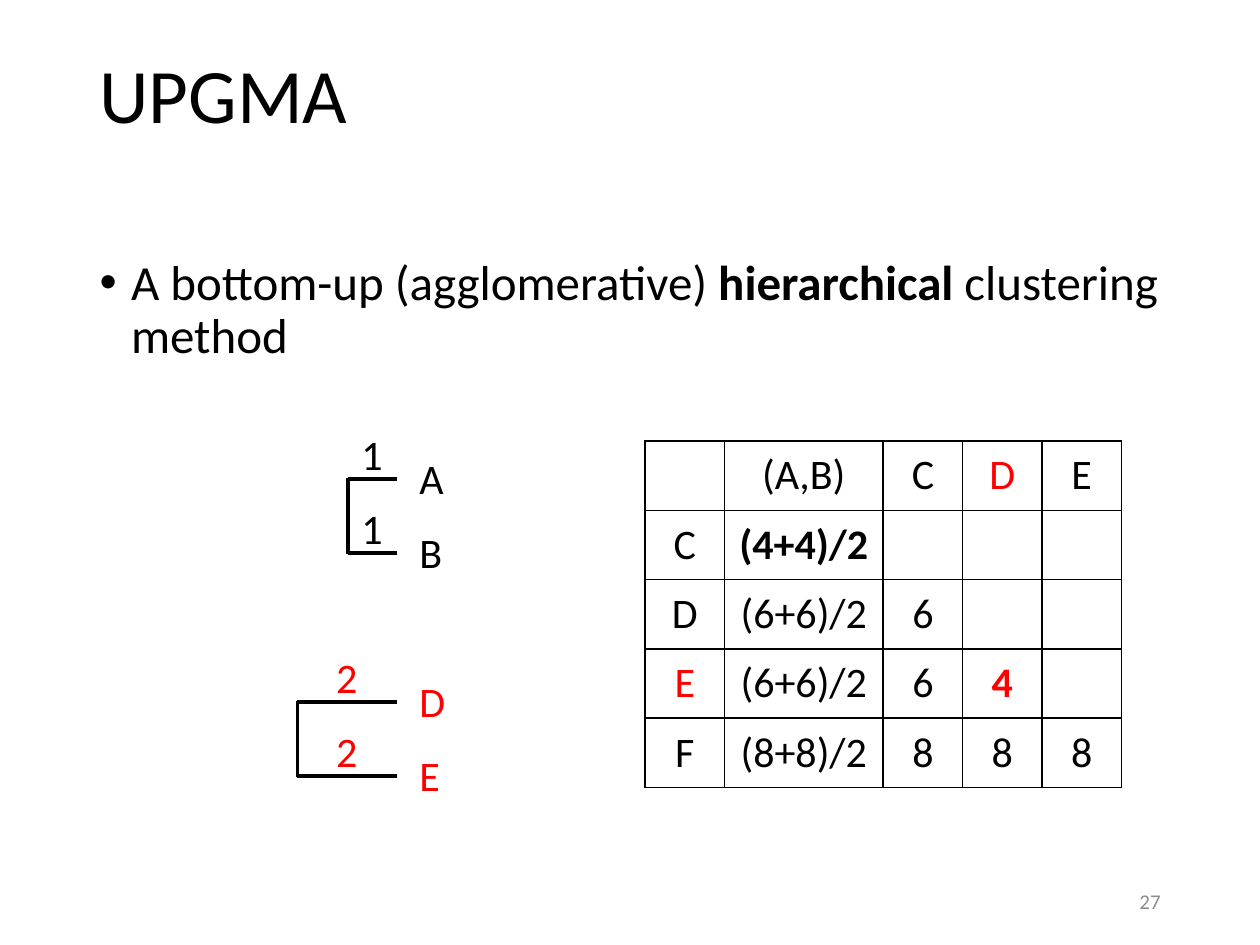
"""Build the UPGMA slide with two partial trees and the reduced distance table."""
from dataclasses import dataclass

from lxml.etree import SubElement
from pptx import Presentation
from pptx.dml.color import RGBColor
from pptx.enum.shapes import MSO_CONNECTOR as Connector
from pptx.enum.text import MSO_ANCHOR as Anchor, MSO_AUTO_SIZE as AutoSize, PP_ALIGN as Align
from pptx.oxml.ns import qn
from pptx.util import Inches, Pt


@dataclass(frozen=True)
class Theme:
    font: str = "Calibri"
    ink: RGBColor = RGBColor(0, 0, 0)
    accent: RGBColor = RGBColor(255, 0, 0)
    muted: RGBColor = RGBColor(0x8C, 0x8C, 0x8C)
    title: int = 44
    body: int = 28
    label: int = 24
    number: int = 12
    branch: int = 2
    border: int = 1


THEME = Theme()
DISTANCES = [
    ["", "(A,B)", "C", "D", "E"],
    ["C", "(4+4)/2", "", "", ""],
    ["D", "(6+6)/2", "6", "", ""],
    ["E", "(6+6)/2", "6", "4", ""],
    ["F", "(8+8)/2", "8", "8", "8"],
]
ACCENT_CELLS = {(0, 3), (3, 0), (3, 3)}
BOLD_CELLS = {(1, 1), (3, 3)}
COLUMN_WIDTHS = [0.63, 1.26, 0.63, 0.63, 0.63]
ROW_HEIGHT = 0.55
TIP_X, NAME_X = 3.15, 3.23
LEAF_GAP = 0.59


def style(paragraph, size, color=THEME.ink, bold=None, align=Align.LEFT):
    font = paragraph.font
    font.name, font.size, font.bold = THEME.font, Pt(size), bold
    font.color.rgb = color
    paragraph.alignment = align


def place(shape, left, top, width, height):
    shape.left, shape.top = Inches(left), Inches(top)
    shape.width, shape.height = Inches(width), Inches(height)
    shape.text_frame.vertical_anchor = Anchor.TOP
    shape.text_frame.auto_size = AutoSize.NONE


def add_title(slide):
    title = slide.shapes.title
    place(title, 0.69, 0.4, 8.62, 1.45)
    title.text_frame.text = "UPGMA"
    heading = title.text_frame.paragraphs[0]
    heading.line_spacing = 0.9
    style(heading, THEME.title)


def add_body(slide):
    body = slide.placeholders[1]
    place(body, 0.69, 2, 8.62, 4.76)
    definition = body.text_frame.paragraphs[0]
    for words, bold in [("A bottom-up (agglomerative) ", None), ("hierarchical ", True),
                        ("clustering method", None)]:
        run = definition.add_run()
        run.text, run.font.bold = words, bold
    style(definition, THEME.body)
    definition.line_spacing, definition.space_before = 0.9, Pt(10)
    properties = definition._p.get_or_add_pPr()
    properties.set("marL", str(Inches(0.25)))
    properties.set("indent", str(Inches(-0.25)))


def add_page_number(slide):
    box = slide.shapes.add_textbox(Inches(7.06), Inches(6.95), Inches(2.25), Inches(0.4))
    box.text_frame.word_wrap = True
    box.text_frame.vertical_anchor = Anchor.MIDDLE
    box.text_frame.text = "27"
    style(box.text_frame.paragraphs[0], THEME.number, THEME.muted, align=Align.RIGHT)


def add_label(group, text, left, top, width, color):
    box = group.shapes.add_textbox(Inches(left), Inches(top), Inches(width), Inches(0.5))
    box.text_frame.word_wrap = False
    box.text_frame.auto_size = AutoSize.SHAPE_TO_FIT_TEXT
    box.text_frame.text = text
    style(box.text_frame.paragraphs[0], THEME.label, color)


def add_branch(group, x1, y1, x2, y2):
    branch = group.shapes.add_connector(
        Connector.STRAIGHT, Inches(x1), Inches(y1), Inches(x2), Inches(y2))
    branch.line.color.rgb = THEME.ink
    branch.line.width = Pt(THEME.branch)
    SubElement(branch._element.spPr, qn("a:effectLst"))


def add_cluster(slide, leaves, length, root_x, top, color):
    """Draw two leaves joined at root_x, each branch labelled with its length."""
    group = slide.shapes.add_group_shape()
    length_width = 0.37
    length_x = (root_x + TIP_X - length_width) / 2
    for index, (name, name_width) in enumerate(leaves):
        y = top + index * LEAF_GAP
        add_label(group, name, NAME_X, y - 0.26, name_width, color)
        add_label(group, length, length_x, y - 0.45, length_width, color)
        add_branch(group, root_x, y, TIP_X, y)
    add_branch(group, root_x, top - 0.01, root_x, top + LEAF_GAP + 0.01)


def add_borders(cell):
    properties = cell._tc.get_or_add_tcPr()
    for index, side in enumerate(("lnL", "lnR", "lnT", "lnB")):
        border = properties.makeelement(qn(f"a:{side}"), {"w": str(Pt(THEME.border))})
        fill = SubElement(border, qn("a:solidFill"))
        SubElement(fill, qn("a:srgbClr"), val=str(THEME.ink))
        properties.insert(index, border)


def add_distance_table(slide):
    rows, columns = len(DISTANCES), len(COLUMN_WIDTHS)
    table = slide.shapes.add_table(
        rows, columns, Inches(5.12), Inches(3.5),
        Inches(sum(COLUMN_WIDTHS)), Inches(rows * ROW_HEIGHT)).table
    table.first_row = table.horz_banding = False
    for column, width in zip(table.columns, COLUMN_WIDTHS):
        column.width = Inches(width)
    for r, values in enumerate(DISTANCES):
        table.rows[r].height = Inches(ROW_HEIGHT)
        for c, value in enumerate(values):
            cell = table.cell(r, c)
            cell.fill.background()
            add_borders(cell)
            cell.vertical_anchor = Anchor.MIDDLE
            cell.text = value
            color = THEME.accent if (r, c) in ACCENT_CELLS else THEME.ink
            style(cell.text_frame.paragraphs[0], THEME.label, color,
                  (r, c) in BOLD_CELLS, Align.CENTER)


def main():
    deck = Presentation()
    deck.slide_width, deck.slide_height = Inches(10), Inches(7.5)
    slide = deck.slides.add_slide(deck.slide_layouts[1])
    add_title(slide)
    add_body(slide)
    add_page_number(slide)
    add_cluster(slide, [("D", 0.41), ("E", 0.37)], "2", 2.36, 5.57, THEME.accent)
    add_distance_table(slide)
    add_cluster(slide, [("A", 0.4), ("B", 0.38)], "1", 2.76, 3.8, THEME.ink)
    deck.save("out.pptx")


if __name__ == "__main__":
    main()
